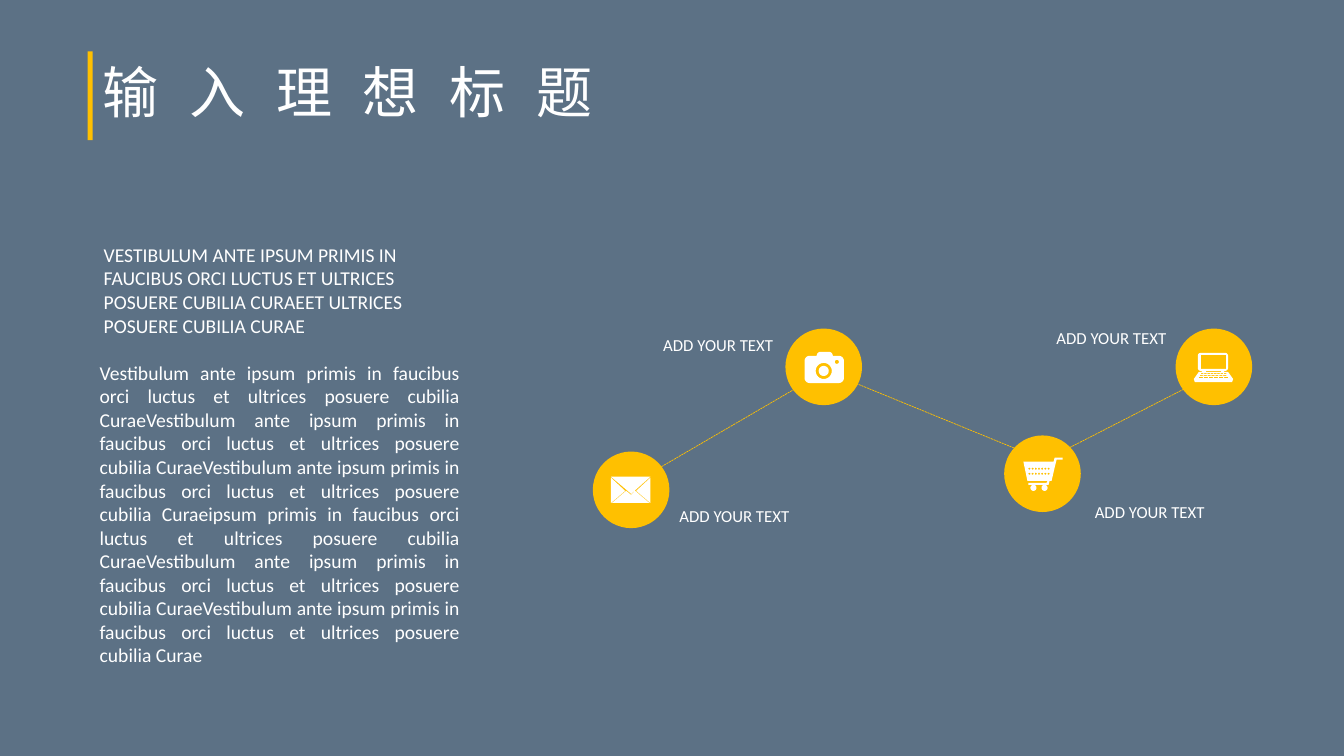
from math import cos, radians, sin

from lxml.etree import SubElement
from pptx import Presentation
from pptx.dml.color import RGBColor
from pptx.enum.dml import MSO_LINE
from pptx.enum.shapes import MSO_CONNECTOR, MSO_SHAPE
from pptx.enum.text import MSO_ANCHOR, MSO_AUTO_SIZE as AutoSize, PP_ALIGN
from pptx.oxml.ns import qn
from pptx.util import Inches, Pt

COLORS = {"background": "5C7185", "accent": "FFC000", "light": "FFFFFF"}
LATIN, CHINESE = "Calibri", "Noto Sans CJK SC"
DIAMETER = 0.76

TITLE = "输入理想标题"
LABEL = "ADD YOUR TEXT"
LEAD = ("VESTIBULUM ANTE IPSUM PRIMIS IN FAUCIBUS ORCI LUCTUS ET ULTRICES "
        "POSUERE CUBILIA CURAEET ULTRICES POSUERE CUBILIA CURAE")
SENTENCE = ("Vestibulum ante ipsum primis in faucibus orci luctus "
            "et ultrices posuere cubilia Curae")
BODY = SENTENCE * 3 + SENTENCE.removeprefix("Vestibulum ante ") + SENTENCE * 2


def rgb(name):
    """Return the named colour of the palette."""
    return RGBColor.from_string(COLORS[name])


def paint(shape, color):
    """Give a shape a plain fill with no outline or shadow."""
    shape.shadow.inherit = False
    shape.fill.solid()
    shape.fill.fore_color.rgb = rgb(color)
    shape.line.fill.background()


def arc(x, y, radius, start, end, steps=6):
    """Return points along an arc, clockwise from the right."""
    angles = [radians(start + (end - start) * i / steps) for i in range(steps + 1)]
    return [(x + radius * cos(a), y + radius * sin(a)) for a in angles]


def disc(x, y, radius):
    """Return the outline of a small disc."""
    return arc(x, y, radius, 0, 360, 24)[:-1]


def rect(left, top, right, bottom):
    """Return the four corners of a rectangle."""
    return [(left, top), (right, top), (right, bottom), (left, bottom)]


def envelope():
    """Return the four flaps of the envelope."""
    return [
        [(-0.05, 0.01), (0, 0.05), (0.04, 0.01), (0.18, 0.13), (-0.19, 0.13)],
        [(-0.2, -0.12), (-0.06, 0.01), (-0.2, 0.13)],
        [(0.19, -0.12), (0.19, 0.13), (0.05, 0.01)],
        [(-0.2, -0.13), (0.19, -0.13), (0, 0.04)],
    ]


def camera():
    """Return the camera body, its lens and its flash."""
    body = (arc(-0.14, -0.06, 0.05, 180, 270) + arc(-0.03, -0.11, 0.04, 180, 270)
            + arc(0.05, -0.11, 0.04, 270, 360) + arc(0.15, -0.06, 0.05, 270, 360)
            + arc(0.15, 0.11, 0.05, 0, 90) + arc(-0.14, 0.11, 0.05, 90, 180))
    return [body, disc(0, 0.04, 0.08), disc(0, 0.04, 0.05), disc(0.13, -0.05, 0.02)]


def cart():
    """Return the cart frame, its wheels and the holes of its basket."""
    frame = [(0.12, -0.16), (0.2, -0.16), (0.2, -0.14), (0.14, -0.14), (0.12, -0.06),
             (0.09, 0.07), (0.07, 0.07), (0.06, 0.11), (-0.14, 0.11), (-0.14, 0.09),
             (0.04, 0.09), (0.05, 0.07), (-0.15, 0.07), (-0.19, -0.12), (0.11, -0.12)]
    wheels = [disc(x, 0.14, 0.03) for x in (-0.09, 0.02)]
    holes = [disc(-0.13 + 0.19 * i / 6, y, 0.01) for y in (-0.05, 0) for i in range(7)]
    return [frame, *wheels, *holes]


def laptop():
    """Return the laptop case, its screen, hinge and keys."""
    case = ([(-0.15, 0.05), (-0.12, 0.05), (-0.12, 0.04)]
            + arc(-0.13, 0.01, 0.03, 90, 180) + arc(-0.13, -0.11, 0.03, 180, 270)
            + arc(0.11, -0.11, 0.03, 270, 360) + arc(0.11, 0.01, 0.03, 0, 90)
            + [(0.1, 0.04), (0.1, 0.05), (0.14, 0.05), (0.19, 0.12), (0.18, 0.15),
               (-0.19, 0.15), (-0.2, 0.12)])
    keys = []
    for top, bottom, left, right, count in ((0.06, 0.07, -0.13, 0.13, 8),
                                            (0.08, 0.09, -0.14, 0.13, 7),
                                            (0.1, 0.11, -0.15, 0.15, 6)):
        pitch = (right - left) / count
        keys += [rect(left + pitch * i, top, left + pitch * (i + 0.8), bottom)
                 for i in range(count)]
    return [case, rect(-0.13, -0.12, 0.12, 0.02), rect(-0.08, 0.04, 0.07, 0.05), *keys]


def add_icon(slide, x, y, contours):
    """Draw an icon centred on a point as one outline with holes."""
    outline = None
    for contour in contours:
        first, *rest = [(Inches(x + dx), Inches(y + dy)) for dx, dy in contour]
        if outline is None:
            outline = slide.shapes.build_freeform(*first)
        else:
            outline.move_to(*first)
        outline.add_line_segments(rest, close=True)
    paint(outline.convert_to_shape(), "light")


def add_text(slide, box, words, size, align=PP_ALIGN.LEFT, wrap=True):
    """Add a light text box that grows with its words."""
    frame = slide.shapes.add_textbox(*map(Inches, box)).text_frame
    frame.text = words
    frame.word_wrap = wrap
    frame.auto_size = AutoSize.SHAPE_TO_FIT_TEXT
    frame.paragraphs[0].alignment = align
    font = frame.paragraphs[0].runs[0].font
    font.name, font.size, font.color.rgb = LATIN, Pt(size), rgb("light")


def add_heading(slide, left, top, width, height):
    """Place the spaced title beside its accent bar."""
    bar = slide.shapes.add_shape(MSO_SHAPE.RECTANGLE, Inches(left - 0.05),
                                 Inches(top + 0.29), Inches(0.05), Inches(0.88))
    paint(bar, "accent")
    title = slide.shapes.title
    title.left, title.top, title.width, title.height = map(
        Inches, (left, top, width, height))
    frame = title.text_frame
    frame.text = TITLE
    frame.auto_size = AutoSize.NONE
    frame.vertical_anchor = MSO_ANCHOR.MIDDLE
    line = frame.paragraphs[0]
    line.alignment, line.line_spacing = PP_ALIGN.LEFT, 0.9
    font = line.runs[0].font
    font.name, font.size, font.color.rgb = CHINESE, Pt(40), rgb("light")
    properties = line.runs[0].font._element
    properties.set("spc", "2200")
    SubElement(properties, qn("a:ea"), typeface=CHINESE)


def add_story(slide, left, top, width, height):
    """Place the lead above the justified paragraph."""
    add_text(slide, (left + 0.04, top, width - 0.04, 1.05), LEAD, 14)
    add_text(slide, (left, top + 1.17, width, height - 1.17), BODY, 14,
             PP_ALIGN.JUSTIFY)


def add_network(slide, left, top):
    """Place the linked circles with their icons and labels."""
    links = [((0.56, 1.5), (2.31, 0.48)), ((2.48, 0.55), (4.46, 1.36)),
             ((4.73, 1.24), (5.96, 0.61))]
    for (x1, y1), (x2, y2) in links:
        link = slide.shapes.add_connector(
            MSO_CONNECTOR.STRAIGHT, Inches(left + x1), Inches(top + y1),
            Inches(left + x2), Inches(top + y2))
        link.line.color.rgb = rgb("accent")
        link.line.width = Pt(0.5)
        link.line.dash_style = MSO_LINE.SQUARE_DOT
        SubElement(link._element.spPr, qn("a:effectLst"))

    stops = [(0, 1.28, envelope, 0.76, 1.77), (1.91, 0.06, camera, 0.6, 0.07),
             (4.08, 1.12, cart, 4.88, 1.73), (5.78, 0.06, laptop, 4.5, 0)]
    for x, y, icon, label_x, label_y in stops:
        circle = slide.shapes.add_shape(
            MSO_SHAPE.OVAL, Inches(left + x), Inches(top + y),
            Inches(DIAMETER), Inches(DIAMETER))
        paint(circle, "accent")
        add_icon(slide, left + x + DIAMETER / 2, top + y + DIAMETER / 2, icon())
        add_text(slide, (left + label_x, top + label_y, 1.43, 0.3), LABEL, 12,
                 wrap=False)


def main():
    """Build and save the slide."""
    deck = Presentation()
    deck.slide_width, deck.slide_height = Inches(13.33), Inches(7.5)
    slide = deck.slides.add_slide(deck.slide_layouts[5])
    slide.background.fill.solid()
    slide.background.fill.fore_color.rgb = rgb("background")
    add_heading(slide, 0.92, 0.22, 11.5, 1.45)
    add_network(slide, 5.88, 3.2)
    add_story(slide, 0.89, 2.36, 3.77, 4.33)
    deck.save("out.pptx")


if __name__ == "__main__":
    main()
